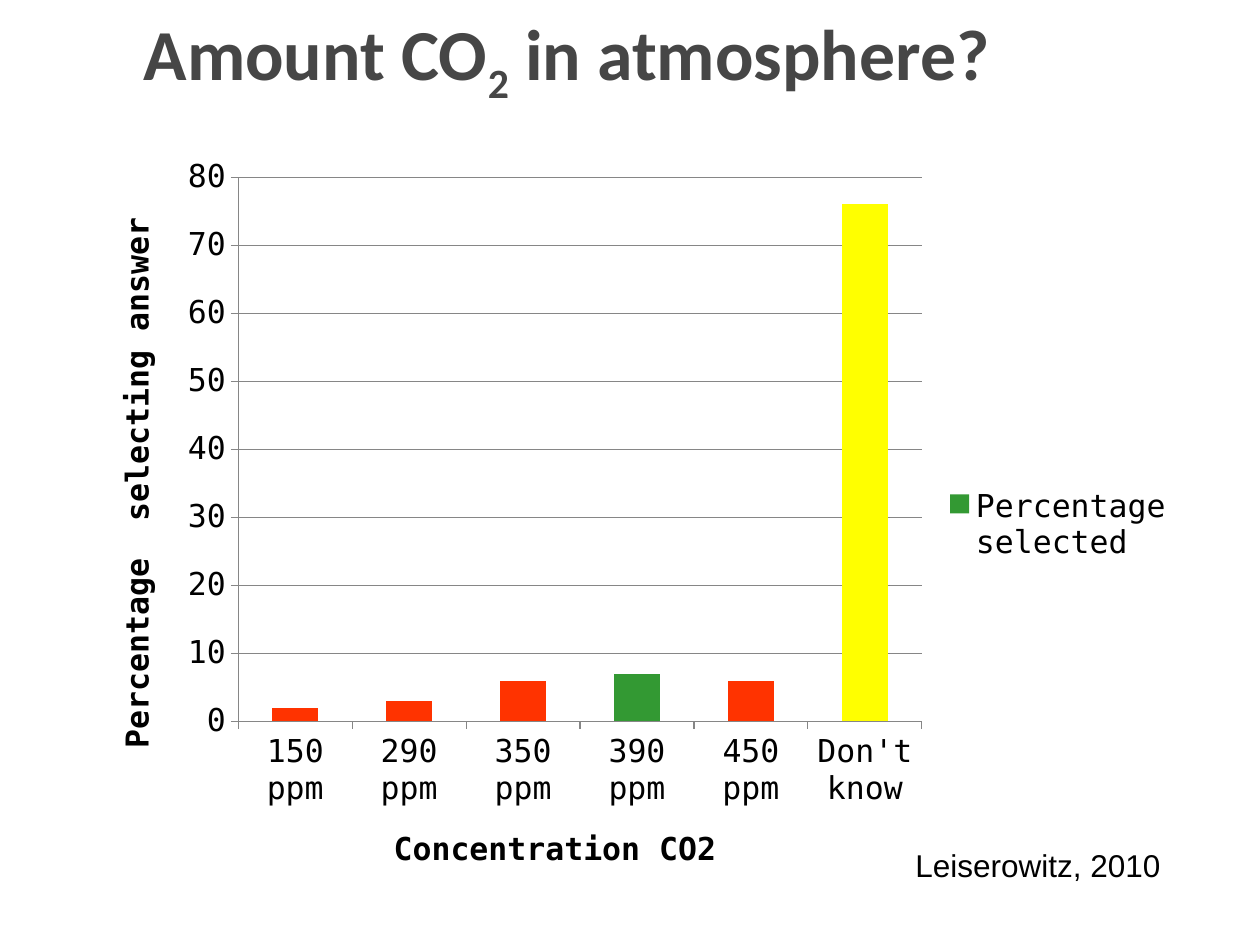
"""Build the slide on the amount of CO2 in the atmosphere."""
from lxml.etree import SubElement as Sub
from pptx import Presentation
from pptx.chart.data import CategoryChartData as Data
from pptx.dml.color import RGBColor as RGB
from pptx.enum.chart import XL_CHART_TYPE as Kind, XL_LEGEND_POSITION as Side, XL_TICK_MARK as Tick
from pptx.enum.text import MSO_ANCHOR as Anchor, PP_ALIGN as Align
from pptx.oxml.ns import qn
from pptx.util import Pt


def paint(hue, code):
    hue.rgb = RGB.from_string(code)


def style(font, code, form):
    for key, val in form.items():
        setattr(font, key, val)
    paint(font.color, code)


deck = Presentation()
deck.slide_width, deck.slide_height = Pt(720), Pt(540)
slide = deck.slides.add_slide(deck.slide_layouts[6])

head = slide.shapes.add_textbox(Pt(0), Pt(-12), Pt(648), Pt(90)).text_frame
head.word_wrap = True
head.vertical_anchor = Anchor.MIDDLE
line = head.paragraphs[0]
line.alignment = Align.CENTER
bold = {"name": "Calibri", "size": Pt(41), "bold": True}
for text, base in [("Amount CO", 0), ("2", -25000), (" in atmosphere?", 0)]:
    run = line.add_run()
    run.text = text
    style(run.font, "464646", bold)
    if base:
        run.font._element.set("baseline", str(base))

data = Data()
data.categories = ["150 ppm", "290 ppm", "350 ppm", "390 ppm", "450 ppm", "Don't know"]
data.add_series("Percentage selected", [2, 3, 6, 7, 6, 76])
chart = slide.shapes.add_chart(
    Kind.COLUMN_CLUSTERED, Pt(48), Pt(84), Pt(630), Pt(432), data).chart
mono = {"name": "DejaVu Sans Mono", "size": Pt(18)}
style(chart.font, "000000", mono)
chart.has_title = False
chart.has_legend = True
chart.legend.position = Side.RIGHT
chart.legend.include_in_layout = False

for axis, text in [(chart.category_axis, "Concentration CO2"),
                   (chart.value_axis, "Percentage  selecting answer")]:
    frame = axis.axis_title.text_frame
    frame.text = text
    style(frame.paragraphs[0].runs[0].font, "000000", {**mono, "bold": True})
    axis.major_tick_mark = Tick.OUTSIDE
    paint(axis.format.line.color, "868686")
axis = chart.value_axis
for key, val in {"minimum_scale": 0, "maximum_scale": 80, "major_unit": 10}.items():
    setattr(axis, key, val)
paint(axis.major_gridlines.format.line.color, "868686")

plot = chart.plots[0]
plot.gap_width = 150
plot.vary_by_categories = False
bars = plot.series[0]
bars.format.fill.solid()
paint(bars.format.fill.fore_color, "339933")
red = "FF3300"
for spot, code in enumerate([red, red, red, "339933", red, "FFFF00"]):
    fill = bars.points[spot].format.fill
    fill.solid()
    paint(fill.fore_color, code)

area = chart._chartSpace.chart.plotArea
for old in area.findall(qn("c:layout")):
    area.remove(old)
grid = Sub(area, qn("c:layout"))
area.insert(0, grid)
inner = Sub(grid, qn("c:manualLayout"))
for tag, val in [("layoutTarget", "inner"), ("xMode", "edge"), ("yMode", "edge"),
                 ("x", "0.14"), ("y", "0.04"), ("w", "0.62"), ("h", "0.72")]:
    Sub(inner, qn("c:" + tag)).set("val", val)

note = slide.shapes.add_textbox(Pt(516), Pt(480), Pt(186), Pt(29)).text_frame
note.word_wrap = True
run = note.paragraphs[0].add_run()
run.text = "Leiserowitz, 2010"
style(run.font, "000000", {"name": "Arial", "size": Pt(18)})

deck.save("out.pptx")
